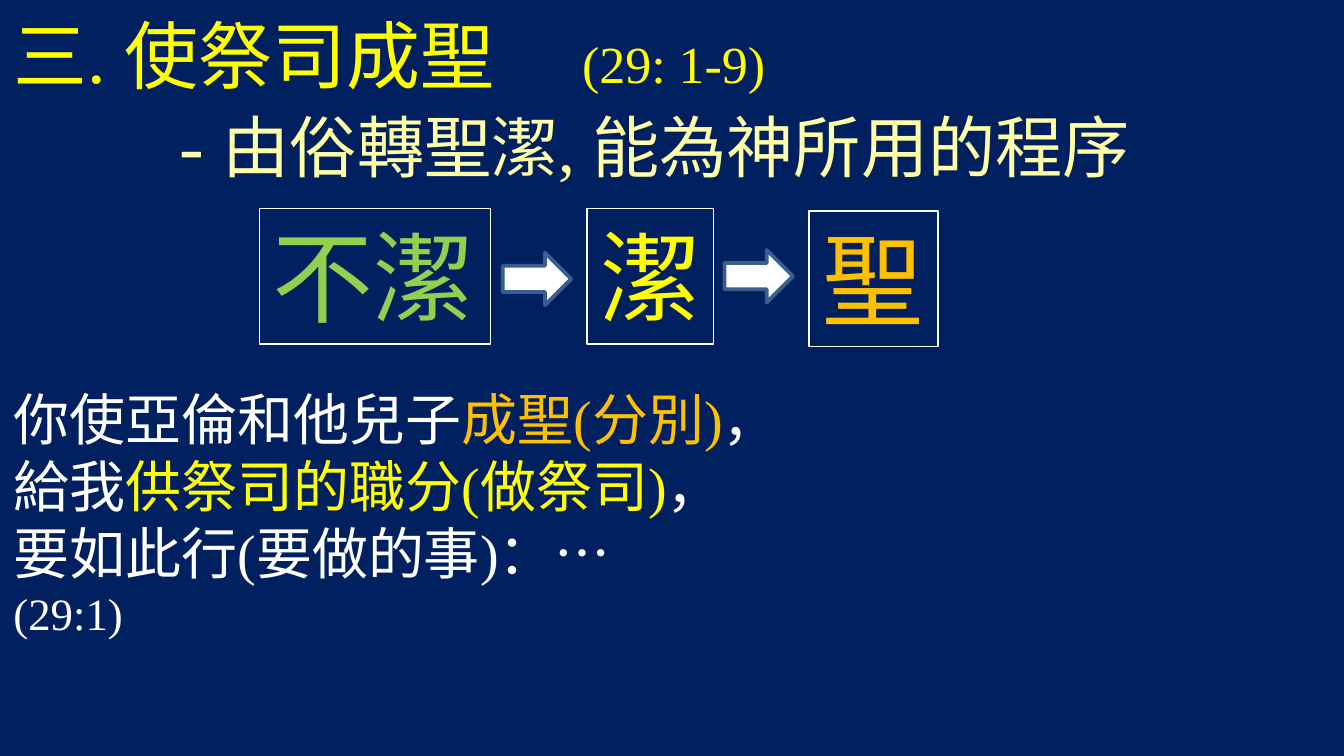
from pptx import Presentation
from pptx.dml.color import RGBColor
from pptx.enum import shapes, text
from pptx.oxml import parse_xml
from pptx.oxml.ns import nsdecls
from pptx.util import Pt

THEME = {
    "font": "Times New Roman",
    "navy": "002060", "white": "FFFFFF", "yellow": "FFFF00", "cream": "FFFFA7",
    "gold": "FFC000", "green": "92D050", "steel": "3A5F8C",
    "head": 39.6, "sub": 36, "ref": 27.9, "body": 30, "note": 24, "word": 54,
}

# Each line is a list of runs: (text, colour, size)
TITLE = [
    [("三. 使祭司成聖\t", "yellow", "head"), ("(29: 1-9)", "yellow", "ref")],
    [("- ", "cream", "head"), ("由俗轉聖潔, 能為神所用的程序", "cream", "sub")],
]
VERSE = [
    [("你使亞倫和他兒子", "white", "body"), ("成聖(分別)", "gold", "body"),
     ("，", "white", "body")],
    [("給我", "white", "body"), ("供祭司的職分(做祭司)", "yellow", "body"),
     ("，", "white", "body")],
    [("要如此行(要做的事)：…", "white", "body")],
    [("(29:1)", "white", "note")],
]
# Stages: word, colour, left, top, width
STAGES = [
    ("不潔", "green", 139, 111.6, 123.8),
    ("潔", "yellow", 314.6, 111.6, 67.7),
    ("聖", "gold", 433.4, 113, 69.1),
]
STAGE_H = 72.7
ARROWS = [(269.3, 135.4), (388.1, 133.9)]
ARROW_W, ARROW_H = 36.7, 28.1
REF_TAB, SUB_INDENT = 304.6, 89


def color(name):
    return RGBColor.from_string(THEME[name])


def write(frame, lines, wrap=True, anchor=text.MSO_ANCHOR.TOP,
          fit=text.MSO_AUTO_SIZE.NONE):
    frame.word_wrap = wrap
    frame.vertical_anchor = anchor
    frame.auto_size = fit
    for i, line in enumerate(lines):
        para = frame.paragraphs[0] if i == 0 else frame.add_paragraph()
        para.alignment = text.PP_ALIGN.LEFT
        para.space_before = Pt(0)
        for words, tint, size in line:
            run = para.add_run()
            run.text = words
            run.font.name = THEME["font"]
            run.font.size = Pt(THEME[size])
            run.font.color.rgb = color(tint)


def place(shape, left, top, width, height):
    shape.left, shape.top = Pt(left), Pt(top)
    shape.width, shape.height = Pt(width), Pt(height)


def indent(para, left):
    """Set the left margin and turn the bullet off."""
    props = para._p.get_or_add_pPr()
    props.set("marL", str(Pt(left)))
    props.set("indent", "0")
    props.append(parse_xml(f"<a:buNone {nsdecls('a')}/>"))


def add_tab(para, pos):
    para._p.get_or_add_pPr().append(parse_xml(
        f'<a:tabLst {nsdecls("a")}><a:tab pos="{Pt(pos)}" algn="l"/></a:tabLst>'))


def draw(slide, kind, box, line, width, fill=None):
    shape = slide.shapes.add_shape(kind, *map(Pt, box))
    shape.shadow.inherit = False
    if fill:
        shape.fill.solid()
        shape.fill.fore_color.rgb = color(fill)
    else:
        shape.fill.background()
    shape.line.color.rgb = color(line)
    shape.line.width = Pt(width)
    return shape


def main():
    deck = Presentation()
    deck.slide_width, deck.slide_height = Pt(720), Pt(405)
    slide = deck.slides.add_slide(deck.slide_layouts[1])
    slide.background.fill.solid()
    slide.background.fill.fore_color.rgb = color("navy")

    title, body = slide.placeholders
    place(title, 0, 0, 720, 105.8)
    write(title.text_frame, TITLE, anchor=text.MSO_ANCHOR.MIDDLE)
    head, sub = title.text_frame.paragraphs
    add_tab(head, REF_TAB)
    indent(sub, SUB_INDENT)

    place(body, 0, 202.3, 720, 193)
    write(body.text_frame, VERSE)
    for para in body.text_frame.paragraphs:
        indent(para, 0)

    for word, tint, left, top, width in STAGES:
        box = draw(slide, shapes.MSO_SHAPE.RECTANGLE,
                   (left, top, width, STAGE_H), "white", 0.75)
        write(box.text_frame, [[(word, tint, "word")]], wrap=False,
              fit=text.MSO_AUTO_SIZE.SHAPE_TO_FIT_TEXT)
    for left, top in ARROWS:
        draw(slide, shapes.MSO_SHAPE.RIGHT_ARROW,
             (left, top, ARROW_W, ARROW_H), "steel", 2, fill="white")

    deck.save("out.pptx")


if __name__ == "__main__":
    main()
